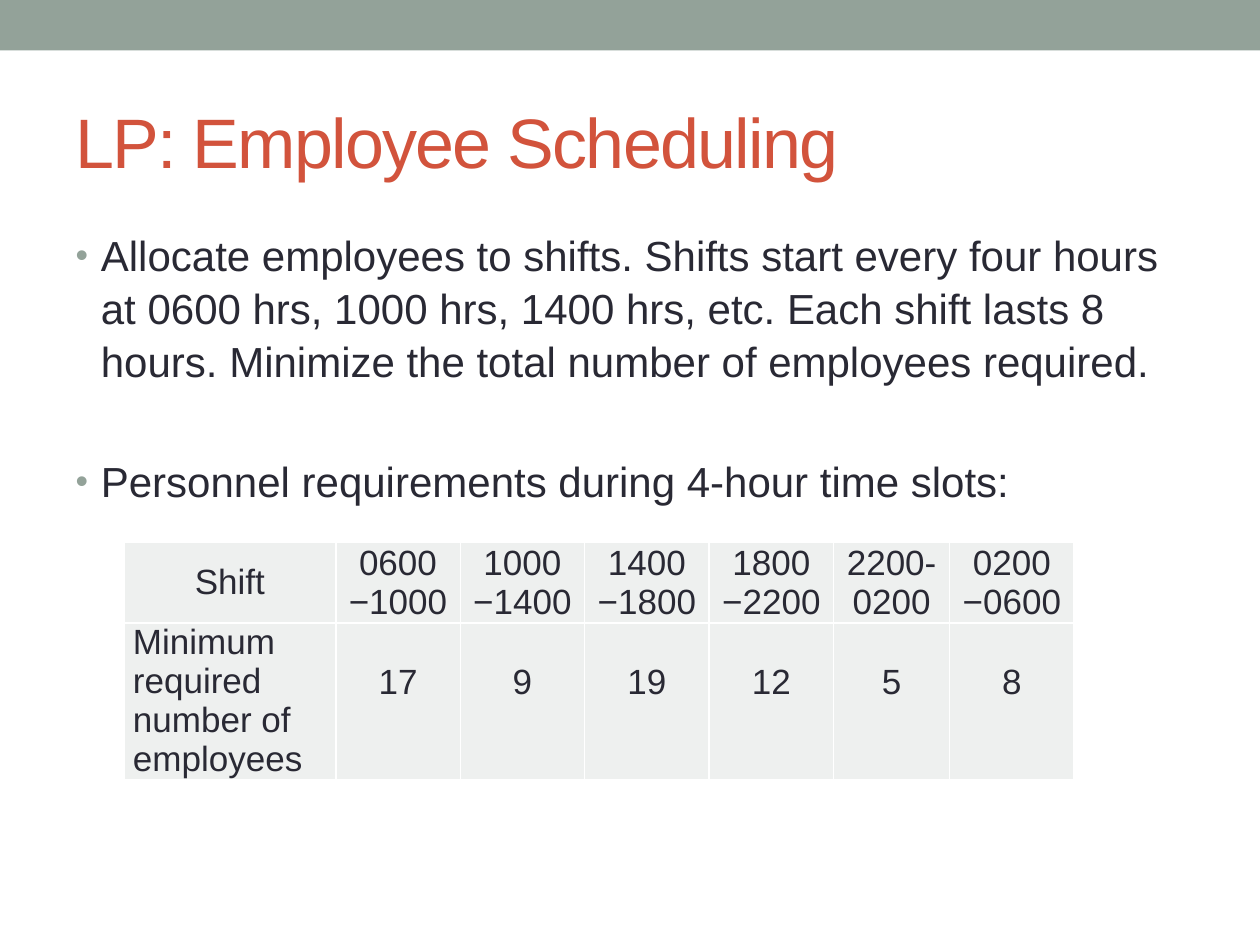
from lxml import etree
from pptx import Presentation
from pptx import util as u
from pptx.dml.color import RGBColor
from pptx.enum import shapes, text
from pptx.oxml import ns

SAGE = RGBColor(0x93, 0xA2, 0x99)
RUST = RGBColor(0xD2, 0x53, 0x3C)
INK = RGBColor(0x29, 0x29, 0x34)
PALE = RGBColor(0xEE, 0xF0, 0xEF)
WHITE = RGBColor(0xFF, 0xFF, 0xFF)
FONT = "Arial"

POINTS = [
    "Allocate employees to shifts. Shifts start every four hours at 0600 hrs, "
    "1000 hrs, 1400 hrs, etc. Each shift lasts 8 hours. Minimize the total "
    "number of employees required.",
    "Personnel requirements during 4-hour time slots:",
]
ROWS = [
    ["Shift", "0600\n−1000", "1000\n−1400", "1400\n−1800", "1800\n−2200",
     "2200-0200", "0200\n−0600"],
    ["Minimum required number of employees", "17", "9", "19", "12", "5", "8"],
]
COLS = [4.27, 2.51, 2.51, 2.51, 2.51, 2.34, 2.51]
HEIGHTS = [1.63, 3.15]


def style(par, size, color):
    par.font.name = FONT
    par.font.size = u.Pt(size)
    par.font.color.rgb = color


def place(shape, box):
    shape.left, shape.top, shape.width, shape.height = map(u.Cm, box)


def sub(parent, tag, **attrs):
    return etree.SubElement(parent, ns.qn(tag), attrs)


def add_bar(slide, box):
    bar = slide.shapes.add_shape(shapes.MSO_SHAPE.RECTANGLE, *map(u.Cm, box))
    bar.shadow.inherit = False
    bar.fill.solid()
    bar.fill.fore_color.rgb = SAGE
    bar.line.fill.background()


def fill_title(slide, box):
    title = slide.shapes.title
    place(title, box)
    frame = title.text_frame
    frame.text = "LP: Employee Scheduling"
    frame.auto_size = text.MSO_AUTO_SIZE.NONE
    frame.vertical_anchor = text.MSO_ANCHOR.MIDDLE
    par = frame.paragraphs[0]
    par.alignment = text.PP_ALIGN.LEFT
    style(par, 40, RUST)
    par.runs[0].font._element.set("spc", "-100")


def add_bullet(par):
    props = par._p.get_or_add_pPr()
    indent = u.Cm(0.51)
    props.set("marL", str(indent))
    props.set("indent", str(-indent))
    sub(sub(props, "a:buClr"), "a:srgbClr", val=str(SAGE))
    sub(props, "a:buSzPct", val="85000")
    sub(props, "a:buFont", typeface=FONT)
    sub(props, "a:buChar", char="•")


def fill_body(slide, box):
    body = slide.placeholders[1]
    place(body, box)
    frame = body.text_frame
    frame.text = "\n".join(POINTS)
    frame.auto_size = text.MSO_AUTO_SIZE.NONE
    for par, gap in zip(frame.paragraphs, (0, 38.5)):
        par.line_spacing = 1.05
        par.space_before = u.Pt(gap)
        add_bullet(par)
        style(par, 24, INK)


def add_edges(cell):
    props = cell._tc.get_or_add_tcPr()
    for side in ("a:lnL", "a:lnR", "a:lnT", "a:lnB"):
        line = sub(props, side, w=str(u.Pt(1)))
        sub(sub(line, "a:solidFill"), "a:srgbClr", val=str(WHITE))


def fill_cell(cell, words, head, label):
    add_edges(cell)
    cell.fill.solid()
    cell.fill.fore_color.rgb = PALE
    cell.margin_left = cell.margin_right = u.Cm(0.18)
    cell.margin_top = cell.margin_bottom = 0
    cell.vertical_anchor = text.MSO_ANCHOR.MIDDLE if head else text.MSO_ANCHOR.TOP
    if not head and not label:
        cell.margin_top = u.Pt(22.5)  # level with the label's second line
    cell.text = words
    left = label and not head
    for par in cell.text_frame.paragraphs:
        par.alignment = text.PP_ALIGN.LEFT if left else text.PP_ALIGN.CENTER
        style(par, 20, INK)


def add_shifts(slide, left, top):
    box = (left, top, sum(COLS), sum(HEIGHTS))
    grid = slide.shapes.add_table(len(ROWS), len(COLS), *map(u.Cm, box)).table
    for col, width in zip(grid.columns, COLS):
        col.width = u.Cm(width)
    for r, (row, high) in enumerate(zip(ROWS, HEIGHTS)):
        grid.rows[r].height = u.Cm(high)
        for c, words in enumerate(row):
            fill_cell(grid.cell(r, c), words, r == 0, c == 0)


def main():
    deck = Presentation()
    deck.slide_width, deck.slide_height = u.Cm(25.4), u.Cm(19.05)
    slide = deck.slides.add_slide(deck.slide_layouts[1])
    add_bar(slide, (0, 0, 25.4, 1.02))
    fill_title(slide, (1.27, 1.47, 22.86, 2.74))
    fill_body(slide, (1.27, 4.45, 22.86, 13.54))
    add_shifts(slide, 2.5, 10.93)
    deck.save("out.pptx")


if __name__ == "__main__":
    main()
